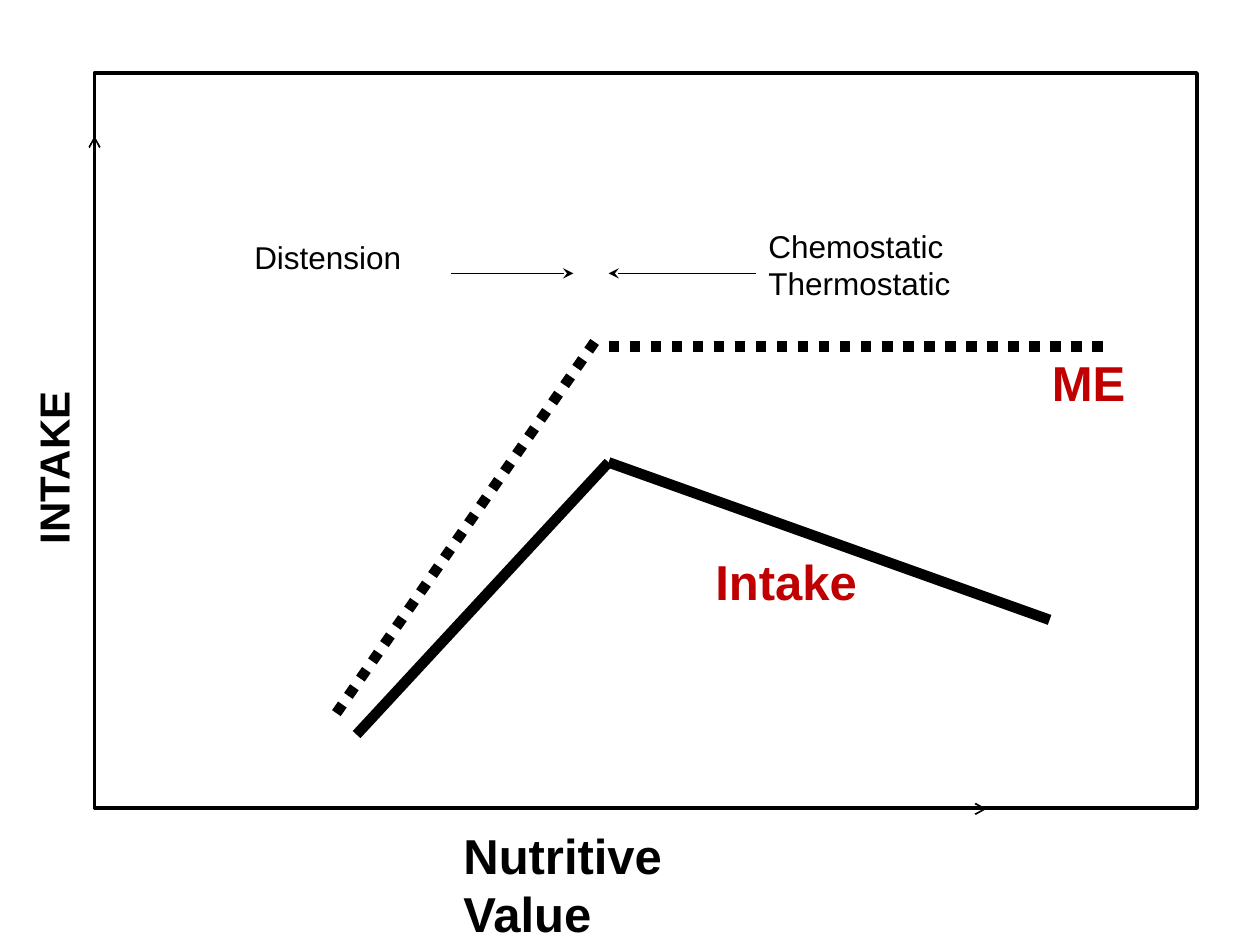
from dataclasses import dataclass

import pptx
import pptx.dml.color
import pptx.enum.dml
import pptx.enum.shapes
import pptx.enum.text
import pptx.oxml
import pptx.oxml.ns
import pptx.slide
import pptx.util
from pptx.util import Inches

BLACK = pptx.dml.color.RGBColor(0x00, 0x00, 0x00)
WHITE = pptx.dml.color.RGBColor(0xFF, 0xFF, 0xFF)
RED = pptx.dml.color.RGBColor(0xC0, 0x00, 0x00)
FONT = "Arial"
DOTTED = pptx.enum.dml.MSO_LINE.ROUND_DOT


@dataclass(frozen=True)
class Line:
    start: tuple[float, float]
    end: tuple[float, float]
    width: float = 1
    dash: pptx.enum.dml.MSO_LINE | None = None
    arrow: str | None = None


@dataclass(frozen=True)
class Label:
    lines: tuple[str, ...]
    left: float
    top: float
    width: float
    height: float
    size: int = 28
    bold: bool = True
    color: pptx.dml.color.RGBColor = BLACK
    rotation: int = 0


CURVES = (
    Line((2.83, 5.83), (4.83, 3.67), 6),
    Line((4.83, 3.67), (8.33, 4.92), 6),
    Line((2.67, 5.66), (4.75, 2.67), 6, DOTTED),
    Line((4.83, 2.75), (8.75, 2.75), 6, DOTTED),
)
ARROWS = (
    Line((3.58, 2.17), (4.55, 2.17), arrow="stealth"),
    Line((6, 2.17), (4.83, 2.17), arrow="stealth"),
    Line((0.75, 2.42), (0.75, 1.08), arrow="arrow"),
    Line((0.75, 6.42), (7.83, 6.42), arrow="arrow"),
)
LABELS = (
    Label(("INTAKE",), -0.41, 3.33, 1.67, 0.51, size=24, rotation=270),
    Label(("Distension",), 1.92, 1.84, 1.76, 0.5, size=18, bold=False),
    Label(("Chemostatic", "Thermostatic"), 6, 1.75, 2.13, 0.9, size=18, bold=False),
    Label(("Nutritive Value",), 3.58, 6.5, 2.78, 0.57),
    Label(("ME",), 8.25, 2.75, 0.79, 0.57, color=RED),
    Label(("Intake",), 5.58, 4.33, 1.34, 0.57, color=RED),
)


def add_frame(s: pptx.slide.Slide) -> None:
    sp = s.shapes.add_shape(
        pptx.enum.shapes.MSO_SHAPE.RECTANGLE,
        Inches(0.75), Inches(0.58), Inches(8.75), Inches(5.83),
    )
    sp.shadow.inherit = False
    sp.fill.solid()
    sp.fill.fore_color.rgb = WHITE
    sp.line.color.rgb = BLACK
    sp.line.width = pptx.util.Pt(2.25)


def add_line(s: pptx.slide.Slide, line: Line) -> None:
    cxn = s.shapes.add_connector(
        pptx.enum.shapes.MSO_CONNECTOR.STRAIGHT,
        *(Inches(v) for v in line.start + line.end),
    )
    cxn.line.color.rgb = BLACK
    cxn.line.width = pptx.util.Pt(line.width)
    if line.dash is not None:
        cxn.line.dash_style = line.dash
    sp_pr = cxn._element.spPr
    if line.arrow:
        tail = pptx.oxml.parse_xml(
            f'<a:tailEnd {pptx.oxml.ns.nsdecls("a")} type="{line.arrow}"/>'
        )
        sp_pr.find(pptx.oxml.ns.qn("a:ln")).append(tail)
    sp_pr.append(pptx.oxml.parse_xml(f'<a:effectLst {pptx.oxml.ns.nsdecls("a")}/>'))


def add_label(s: pptx.slide.Slide, label: Label) -> None:
    sp = s.shapes.add_textbox(
        Inches(label.left), Inches(label.top), Inches(label.width), Inches(label.height)
    )
    sp.rotation = label.rotation
    tf = sp.text_frame
    tf.word_wrap = True
    tf.auto_size = pptx.enum.text.MSO_AUTO_SIZE.NONE
    for i, text in enumerate(label.lines):
        p = tf.add_paragraph() if i else tf.paragraphs[0]
        r = p.add_run()
        r.text = text
        r.font.name = FONT
        r.font.size = pptx.util.Pt(label.size)
        r.font.bold = label.bold
        r.font.color.rgb = label.color


def main() -> None:
    prs = pptx.Presentation()
    prs.slide_width, prs.slide_height = Inches(10), Inches(7.5)
    s = prs.slides.add_slide(prs.slide_layouts[6])
    add_frame(s)
    for line in CURVES + ARROWS:
        add_line(s, line)
    for label in LABELS:
        add_label(s, label)
    prs.save("out.pptx")


if __name__ == "__main__":
    main()
